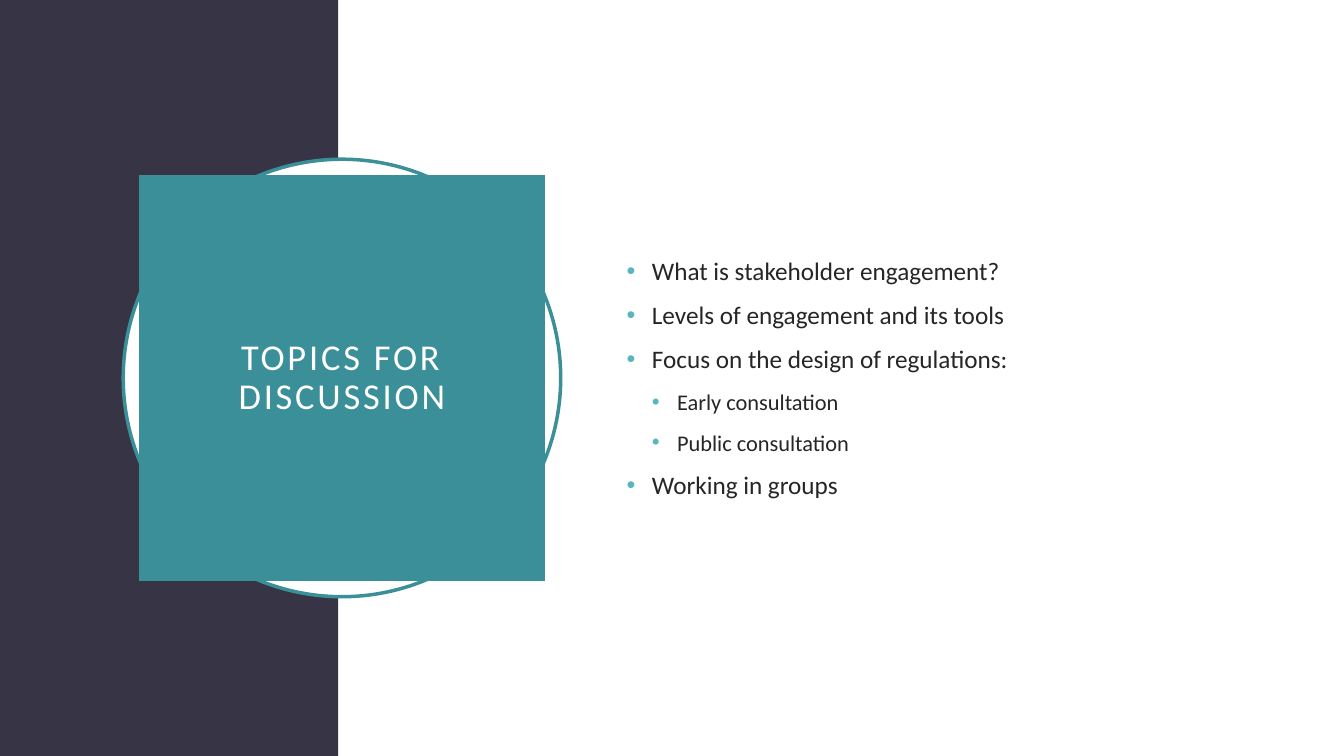
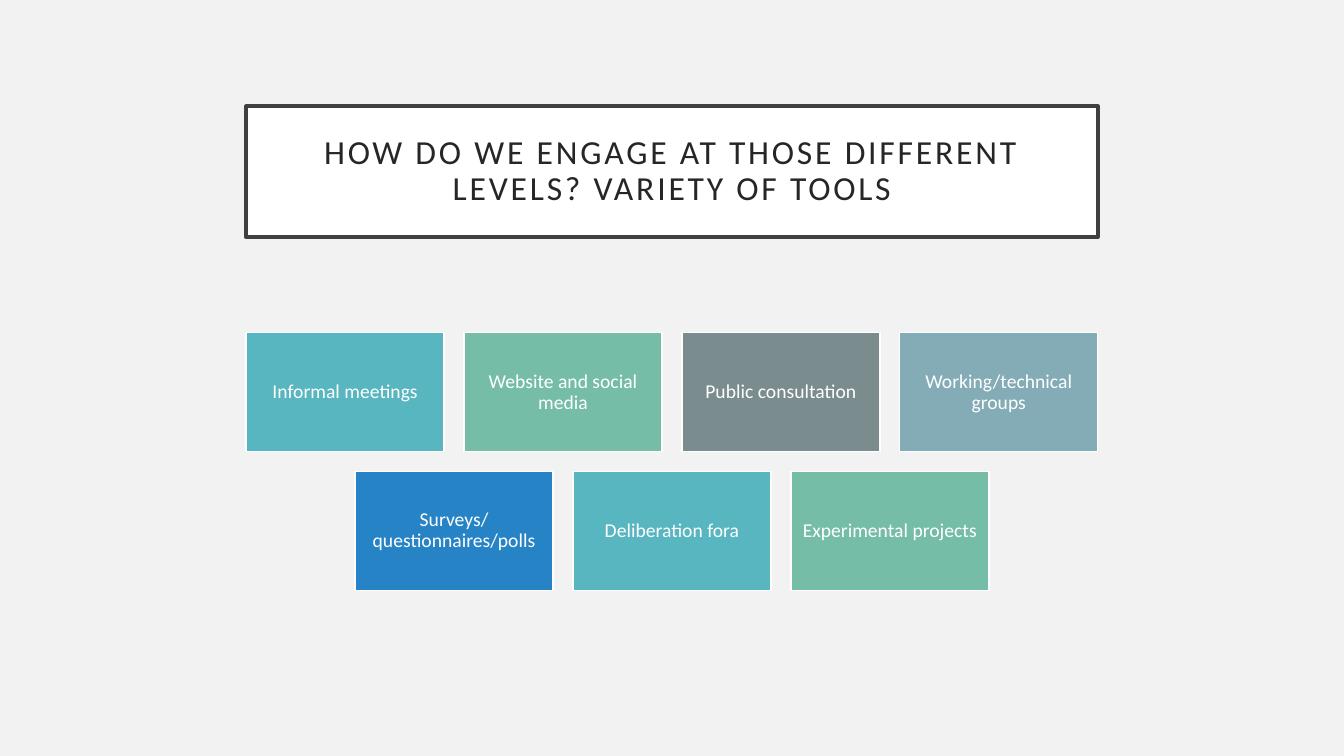
from lxml.etree import SubElement
from pptx import Presentation
from pptx.dml.color import RGBColor
from pptx.enum.shapes import MSO_SHAPE
from pptx.enum.text import MSO_ANCHOR, PP_ALIGN
from pptx.oxml.ns import qn
from pptx.util import Pt

# Shared style
WIDTH, HEIGHT = 960, 540
FONT = "Calibri"
COLORS = {
    "white": "FFFFFF", "paper": "F2F2F2", "ink": "262626", "frame": "404040",
    "night": "373545", "deep": "3A8F98", "teal": "58B6C0", "green": "75BDA7",
    "gray": "7A8C8E", "mist": "84ACB6", "blue": "2683C6",
}


def rgb(name):
    return RGBColor.from_string(COLORS[name])


def add_text(p, text, size=18, color="ink", align=PP_ALIGN.LEFT,
             line=None, before=0, tracking=0):
    """Put one formatted run of text into a paragraph."""
    p.alignment = align
    p.space_before = Pt(before)
    if line:
        p.line_spacing = line
    r = p.add_run()
    r.text = text
    r.font.name = FONT
    r.font.size = Pt(size)
    r.font.color.rgb = rgb(color)
    if tracking:
        r._r.get_or_add_rPr().set("spc", str(tracking * 100))


def add_bullet(p, level, step=18):
    """Give a paragraph a teal bullet with a hanging indent."""
    p.level = level
    pPr = p._p.get_or_add_pPr()
    pPr.set("marL", str(Pt(step * (level + 1))))
    pPr.set("indent", str(Pt(-step)))
    color = SubElement(pPr, qn("a:buClr"))
    SubElement(color, qn("a:srgbClr")).set("val", COLORS["teal"])
    SubElement(pPr, qn("a:buFont")).set("typeface", "Arial")
    SubElement(pPr, qn("a:buChar")).set("char", "•")


class Deck:
    def __init__(self):
        self.prs = Presentation()
        self.prs.slide_width, self.prs.slide_height = Pt(WIDTH), Pt(HEIGHT)
        self.s = None

    def slide(self, background):
        self.s = self.prs.slides.add_slide(self.prs.slide_layouts[6])
        fill = self.s.background.fill
        fill.solid()
        fill.fore_color.rgb = rgb(background)

    def shape(self, x, y, w, h, fill, line=None, weight=2.5,
              kind=MSO_SHAPE.RECTANGLE):
        sp = self.s.shapes.add_shape(kind, Pt(x), Pt(y), Pt(w), Pt(h))
        sp.shadow.inherit = False
        sp.fill.solid()
        sp.fill.fore_color.rgb = rgb(fill)
        if line:
            sp.line.color.rgb = rgb(line)
            sp.line.width = Pt(weight)
        else:
            sp.line.fill.background()
        return sp

    def label(self, sp, text, inset, **style):
        """Write centred text inside a shape."""
        tf = sp.text_frame
        tf.word_wrap = True
        tf.vertical_anchor = MSO_ANCHOR.MIDDLE
        tf.margin_left = tf.margin_right = Pt(inset)
        tf.margin_top = tf.margin_bottom = Pt(inset)
        add_text(tf.paragraphs[0], text, align=PP_ALIGN.CENTER, line=0.9, **style)

    def title(self, x, y, w, h, text, size, fill, color="ink", line=None):
        sp = self.shape(x, y, w, h, fill, line)
        self.label(sp, text, 14.4, size=size, color=color, tracking=2)

    def card(self, x, y, w, h, text, fill):
        sp = self.shape(x, y, w, h, fill, "white", 1)
        self.label(sp, text, 4.2, size=14, color="white")

    def bullets(self, x, y, w, h, items):
        tf = self.s.shapes.add_textbox(Pt(x), Pt(y), Pt(w), Pt(h)).text_frame
        tf.word_wrap = True
        tf.vertical_anchor = MSO_ANCHOR.MIDDLE
        for i, (level, text) in enumerate(items):
            p = tf.add_paragraph() if i else tf.paragraphs[0]
            add_text(p, text, size=18 - 2 * level, before=10)
            add_bullet(p, level)


def topics_slide(deck):
    deck.slide("white")
    deck.shape(0, 0, 241.6, HEIGHT, "night")

    # Ring and square share one centre
    cx, cy, ring, square = 244.3, HEIGHT / 2, 312.5, 290
    deck.shape(cx - ring / 2, cy - ring / 2, ring, ring, "white", "deep",
               kind=MSO_SHAPE.OVAL)
    deck.title(cx - square / 2, cy - square / 2, square, square,
               "TOPICS FOR DISCUSSION", 26, "deep", "white")

    deck.bullets(440.6, 110.2, 419, 319, [
        (0, "What is stakeholder engagement?"),
        (0, "Levels of engagement and its tools"),
        (0, "Focus on the design of regulations:"),
        (1, "Early consultation"),
        (1, "Public consultation"),
        (0, "Working in groups"),
    ])


def tools_slide(deck):
    deck.slide("paper")
    span = 608.4
    deck.title((WIDTH - span) / 2, 75.8, span, 93.6,
               "HOW DO WE ENGAGE AT THOSE DIFFERENT LEVELS? VARIETY OF TOOLS",
               24, "white", line="frame")

    # Centred rows of cards, with gaps a tenth of the card width
    rows = [
        [("Informal meetings", "teal"), ("Website and social media", "green"),
         ("Public consultation", "gray"), ("Working/technical groups", "mist")],
        [("Surveys/questionnaires/polls", "blue"), ("Deliberation fora", "teal"),
         ("Experimental projects", "green")],
    ]
    w = span / 4.3
    h, gap = 0.6 * w, 0.1 * w
    for i, row in enumerate(rows):
        left = (WIDTH - len(row) * w - (len(row) - 1) * gap) / 2
        for j, (text, fill) in enumerate(row):
            deck.card(left + j * (w + gap), 237.7 + i * (h + gap), w, h, text, fill)


def main():
    deck = Deck()
    topics_slide(deck)
    tools_slide(deck)
    deck.prs.save("out.pptx")


if __name__ == "__main__":
    main()
